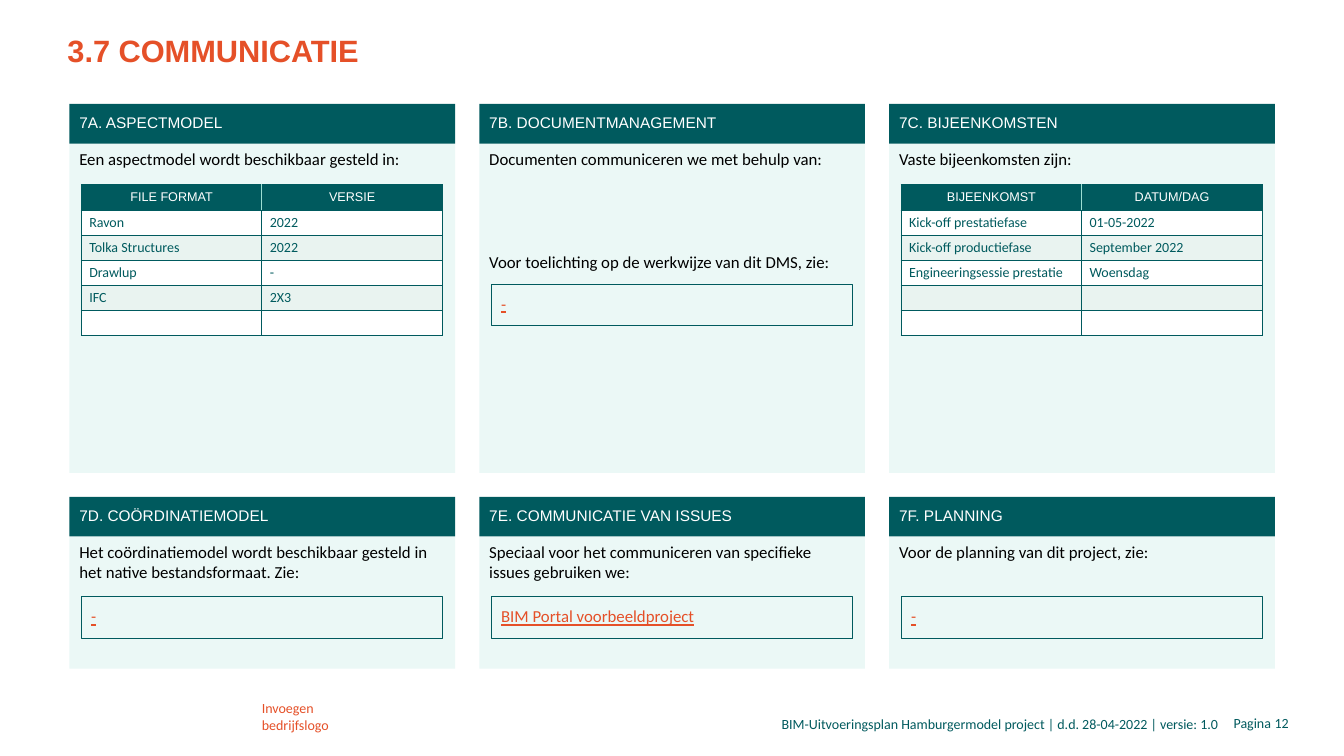
from lxml import etree
from pptx import Presentation
from pptx.dml.color import RGBColor
from pptx.enum.shapes import MSO_SHAPE
from pptx.enum.text import MSO_ANCHOR as ANCHOR, MSO_AUTO_SIZE as AUTOSIZE, PP_ALIGN as ALIGN
from pptx.oxml.ns import qn
from pptx.util import Cm, Pt

TEAL = RGBColor(0x00, 0x5A, 0x5E)
MINT = RGBColor(0xEB, 0xF8, 0xF6)
BAND = RGBColor(0xE9, 0xF3, 0xF0)
AQUA = RGBColor(0x9D, 0xDE, 0xD3)
ORANGE = RGBColor(0xE5, 0x50, 0x28)
WHITE = RGBColor(0xFF, 0xFF, 0xFF)
BLACK = RGBColor(0x00, 0x00, 0x00)

# Content
TITLE = "3.7 COMMUNICATIE"
PANELS = [  # heading, intro, link box
    [("7A. ASPECTMODEL", "Een aspectmodel wordt beschikbaar gesteld in:", None),
     ("7B. DOCUMENTMANAGEMENT", "Documenten communiceren we met behulp van:", None),
     ("7C. BIJEENKOMSTEN", "Vaste bijeenkomsten zijn:", None)],
    [("7D. COÖRDINATIEMODEL",
      "Het coördinatiemodel wordt beschikbaar gesteld in het native bestandsformaat. Zie:", "-"),
     ("7E. COMMUNICATIE VAN ISSUES",
      "Speciaal voor het communiceren van specifieke issues gebruiken we:",
      "BIM Portal voorbeeldproject"),
     ("7F. PLANNING", "Voor de planning van dit project, zie:", "-")],
]
DMS_NOTE = "Voor toelichting op de werkwijze van dit DMS, zie:"
DMS_LINK = "-"
TABLES = [  # column, header, rows
    (0, ("FILE FORMAT", "VERSIE"),
     [("Ravon", "2022"), ("Tolka Structures", "2022"), ("Drawlup", "-"),
      ("IFC", "2X3"), ("", "")]),
    (2, ("BIJEENKOMST", "DATUM/DAG"),
     [("Kick-off prestatiefase", "01-05-2022"), ("Kick-off productiefase", "September 2022"),
      ("Engineeringsessie prestatie", "Woensdag"), ("", ""), ("", "")]),
]
FOOTERS = [  # text, left, top, width, side inset, colour, alignment
    ("BIM-Uitvoeringsplan Hamburgermodel project | d.d. 28-04-2022 | versie: 1.0",
     17.2, 17.91, 13.74, 0.25, TEAL, ALIGN.RIGHT),
    ("Invoegen\nbedrijfslogo", 6.35, 17.5, 2.9, 0.25, ORANGE, ALIGN.LEFT),
    ("Pagina", 30.66, 17.88, 1.37, 0, TEAL, ALIGN.RIGHT),
    ("12", 32.12, 17.88, 1.03, 0, TEAL, ALIGN.LEFT),
]

# Layout in centimetres
LEFT, PITCH, PANEL_W = 1.75, 10.33, 9.72
HEAD_H = 1.0
PANEL_ROWS = [(2.62, 8.3), (12.52, 3.33)]  # top, body height
INSET, INNER_W = 0.3, 9.1
LINK_H = 1.04
TABLE_TOP, TABLE_HEAD_H, TABLE_ROW_H = 4.65, 0.65, 0.63


def column_left(col):
    return LEFT + col * PITCH


def format_text(tf, text, size, color, font="Calibri", align=ALIGN.LEFT, spacing=None,
                bold=False, underline=False):
    tf.text = text
    for p in tf.paragraphs:
        p.alignment = align
        if spacing:
            p.line_spacing = spacing
        for r in p.runs:
            r.font.name, r.font.size = font, Pt(size)
            r.font.color.rgb = color
            r.font.bold, r.font.underline = bold, underline
        if not p.runs:
            etree.SubElement(p._p, qn("a:endParaRPr"), sz=str(size * 100))


def add_rect(x, y, w, h, fill, line=None, anchor=ANCHOR.MIDDLE):
    sp = slide.shapes.add_shape(MSO_SHAPE.RECTANGLE, Cm(x), Cm(y), Cm(w), Cm(h))
    sp.shadow.inherit = False
    sp.fill.solid()
    sp.fill.fore_color.rgb = fill
    if line:
        sp.line.color.rgb = line
        sp.line.width = Pt(0.75)
    else:
        sp.line.fill.background()
    sp.text_frame.word_wrap = True
    sp.text_frame.vertical_anchor = anchor
    return sp.text_frame


def add_text(x, y, w, h, text, size, color, side=0.25, align=ALIGN.LEFT):
    tf = slide.shapes.add_textbox(Cm(x), Cm(y), Cm(w), Cm(h)).text_frame
    tf.word_wrap = True
    tf.margin_left = tf.margin_right = Cm(side)
    format_text(tf, text, size, color, align=align)


def add_link(col, y, text):
    tf = add_rect(column_left(col) + INSET, y, INNER_W, LINK_H, MINT, TEAL)
    format_text(tf, text, 12, ORANGE, spacing=0.9, underline=True)


def set_borders(cell, colors):
    tc_pr = cell._tc.get_or_add_tcPr()
    for side, color in zip("LRTB", colors):
        ln = etree.SubElement(tc_pr, qn("a:ln" + side), w=str(Pt(0.75)))
        fill = etree.SubElement(ln, qn("a:solidFill"))
        etree.SubElement(fill, qn("a:srgbClr"), val=str(color))


def add_grid(x, y, row_h, rows, is_head):
    tbl = slide.shapes.add_table(len(rows), 2, Cm(x), Cm(y), Cm(INNER_W),
                                 Cm(row_h * len(rows))).table
    tbl.first_row = tbl.horz_banding = False
    for i, row in enumerate(rows):
        tbl.rows[i].height = Cm(row_h)
        for j, text in enumerate(row):
            cell = tbl.cell(i, j)
            borders = [TEAL] * 4
            if is_head:
                borders[1 - j] = AQUA  # the shared inner edge
            set_borders(cell, borders)
            cell.fill.solid()
            if is_head:
                cell.fill.fore_color.rgb = TEAL
                format_text(cell.text_frame, text, 9, WHITE, "Arial", ALIGN.CENTER)
            else:
                cell.fill.fore_color.rgb = BAND if i % 2 else WHITE
                cell.vertical_anchor = ANCHOR.MIDDLE
                cell.margin_left = Cm(0.2)
                cell.margin_right = cell.margin_top = cell.margin_bottom = Cm(0.1)
                format_text(cell.text_frame, text, 10, TEAL)


prs = Presentation()
prs.slide_width, prs.slide_height = Cm(33.87), Cm(19.05)
slide = prs.slides.add_slide(prs.slide_layouts[5])

# Title
title = slide.shapes.title
title.left, title.top, title.width, title.height = Cm(1.7), Cm(0.66), Cm(14.76), Cm(1.2)
tf = title.text_frame
tf.auto_size = AUTOSIZE.NONE
tf.vertical_anchor = ANCHOR.TOP
tf.margin_left = 0
format_text(tf, TITLE, 22, ORANGE, "Arial", bold=True)

# Panels
for (top, body_h), panels in zip(PANEL_ROWS, PANELS):
    for col, (heading, intro, link) in enumerate(panels):
        x = column_left(col)
        body = add_rect(x, top + HEAD_H, PANEL_W, body_h, MINT, anchor=ANCHOR.TOP)
        format_text(body, intro, 12, BLACK)
        head = add_rect(x, top, PANEL_W, HEAD_H, TEAL)
        format_text(head, heading, 11, WHITE, "Arial", spacing=0.9)
        if link:
            add_link(col, 15.04, link)

# Document management note
add_text(column_left(1), 6.23, PANEL_W, 0.77, DMS_NOTE, 12, BLACK)
add_link(1, 7.16, DMS_LINK)

# Tables
for col, header, rows in TABLES:
    x = column_left(col) + INSET
    add_grid(x, TABLE_TOP, TABLE_HEAD_H, [header], True)
    add_grid(x, TABLE_TOP + TABLE_HEAD_H, TABLE_ROW_H, rows, False)

# Footer
for text, x, y, w, side, color, align in FOOTERS:
    add_text(x, y, w, 0.69, text, 10, color, side, align)

prs.save("out.pptx")
